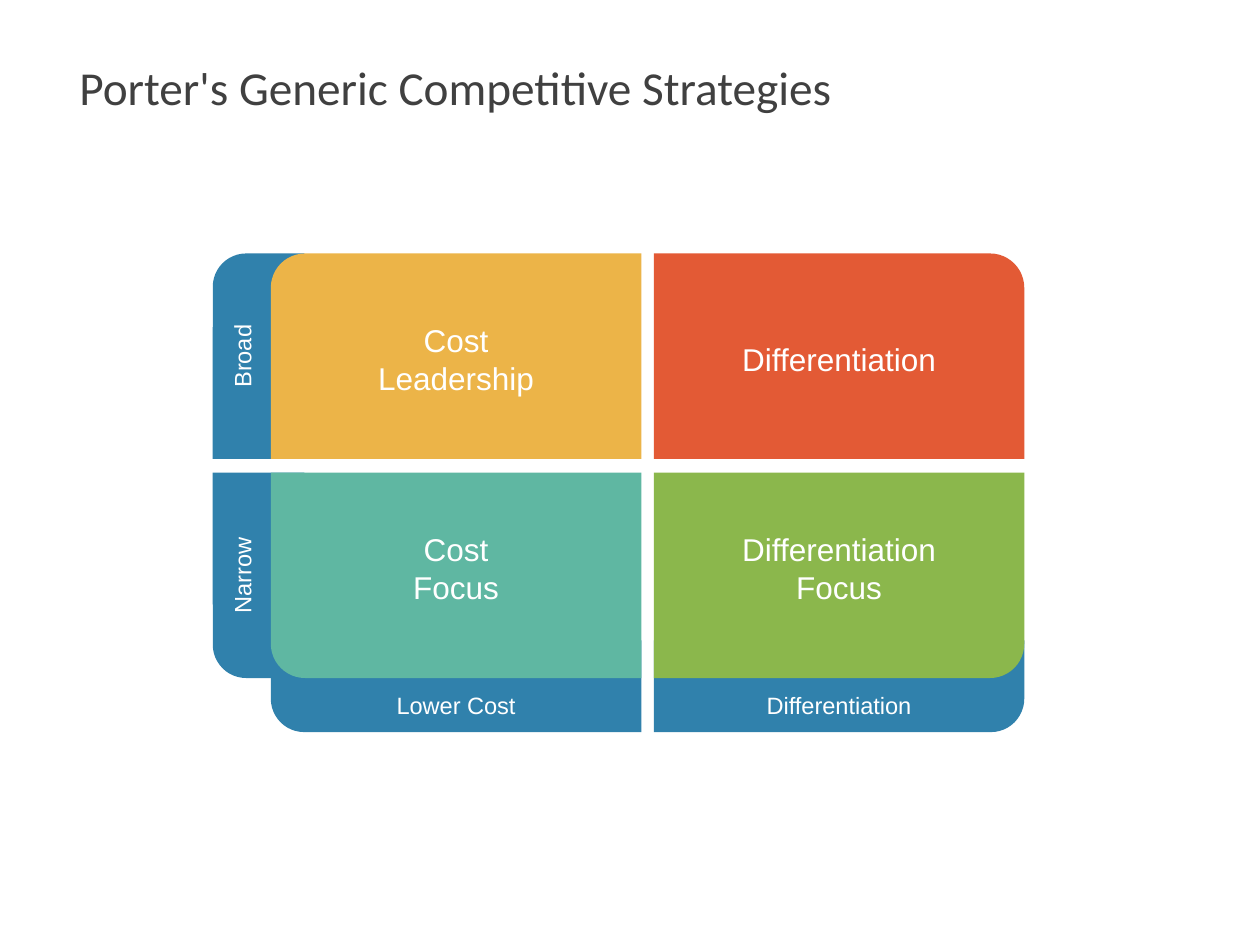
from dataclasses import dataclass

from pptx import Presentation
from pptx.dml.color import RGBColor
from pptx.enum.shapes import MSO_SHAPE
from pptx.enum.text import MSO_ANCHOR, PP_ALIGN
from pptx.util import Cm, Pt


@dataclass(frozen=True)
class Theme:
    title_font: str = "Calibri"
    body_font: str = "Arial"
    title_size: float = 27
    card_size: float = 18
    tab_size: float = 13.5
    title_color: str = "404040"
    label_color: str = "FFFFFF"
    tab_fill: str = "3081AC"


@dataclass(frozen=True)
class Box:
    """A rectangle in centimetres."""
    left: float
    top: float
    width: float
    height: float

    def lengths(self):
        return Cm(self.left), Cm(self.top), Cm(self.width), Cm(self.height)


THEME = Theme()
CARDS = [
    [("Cost\nLeadership", "ECB448"), ("Differentiation", "E35A35")],
    [("Cost\nFocus", "5FB7A2"), ("Differentiation\nFocus", "8BB74C")],
]
SCOPES = ["Broad", "Narrow"]
ADVANTAGES = ["Lower Cost", "Differentiation"]

COLUMN_GAP, ROW_GAP = 0.25, 0.28
SIDE_STRIP, BOTTOM_STRIP = 1.17, 1.09
TAB_DEPTH = 1.85
CARD_ROUNDING, TAB_ROUNDING = 0.167, 0.364
LABEL_SHIFTS = [0.05, -0.15]


def format_para(para, font_name, size, color):
    para.font.name = font_name
    para.font.size = Pt(size)
    para.font.color.rgb = RGBColor.from_string(color)


def add_corner_panel(group, box, color, rounding, on_left, on_bottom):
    """Add a rectangle whose one rounded corner is on the given sides."""
    panel = group.shapes.add_shape(MSO_SHAPE.ROUND_1_RECTANGLE, *box.lengths())
    panel.adjustments[0] = rounding
    panel.shadow.inherit = False
    panel.fill.solid()
    panel.fill.fore_color.rgb = RGBColor.from_string(color)
    panel.line.fill.background()
    transform = panel.element.spPr.get_or_add_xfrm()
    transform.set("flipH", str(int(on_left)))
    transform.set("flipV", str(int(on_bottom)))


def add_label(group, box, text, size, rotation=0):
    """Add centred text in the box; a quarter turn keeps the box's centre."""
    label = group.shapes.add_textbox(*box.lengths())
    label.rotation = rotation
    frame = label.text_frame
    frame.word_wrap = True
    frame.vertical_anchor = MSO_ANCHOR.MIDDLE
    frame.margin_top = frame.margin_bottom = 0
    frame.text = text
    for para in frame.paragraphs:
        para.alignment = PP_ALIGN.CENTER
        format_para(para, THEME.body_font, size, THEME.label_color)


def add_title(page, box, text):
    title = page.shapes.title
    title.left, title.top, title.width, title.height = box.lengths()
    frame = title.text_frame
    frame.text = text
    frame.vertical_anchor = MSO_ANCHOR.MIDDLE
    frame.margin_left = frame.margin_right = Cm(0.33)
    para = frame.paragraphs[0]
    para.alignment = PP_ALIGN.LEFT
    format_para(para, THEME.title_font, THEME.title_size, THEME.title_color)


def add_side_tab(group, card, text, on_bottom):
    """Add a tab that shows to the left of the card and runs under it."""
    left = card.left - SIDE_STRIP
    tab = Box(left, card.top, TAB_DEPTH, card.height)
    add_corner_panel(group, tab, THEME.tab_fill, TAB_ROUNDING, True, on_bottom)
    offset = (card.height - SIDE_STRIP) / 2
    label = Box(left - offset, card.top + offset, card.height, SIDE_STRIP)
    add_label(group, label, text, THEME.tab_size, rotation=-90)


def add_bottom_tab(group, card, text, on_left):
    """Add a tab that shows below the card and runs under it."""
    bottom = card.top + card.height
    top = bottom + BOTTOM_STRIP - TAB_DEPTH
    tab = Box(card.left, top, card.width, TAB_DEPTH)
    add_corner_panel(group, tab, THEME.tab_fill, TAB_ROUNDING, on_left, True)
    label = Box(card.left, bottom, card.width, BOTTOM_STRIP)
    add_label(group, label, text, THEME.tab_size)


def add_card(group, card, text, color, row, column):
    add_corner_panel(group, card, color, CARD_ROUNDING, column == 0, row == 1)
    label = Box(card.left + 1.03, card.top + 0.56 + LABEL_SHIFTS[row],
                card.width - 2.06, card.height - 1.12)
    add_label(group, label, text, THEME.card_size)


def add_matrix(page, box):
    """Add the two-by-two matrix with its axis tabs along the left and bottom."""
    group = page.shapes.add_group_shape()
    width = (box.width - SIDE_STRIP - COLUMN_GAP) / 2
    height = (box.height - BOTTOM_STRIP - ROW_GAP) / 2
    grid = [[Box(box.left + SIDE_STRIP + column * (width + COLUMN_GAP),
                 box.top + row * (height + ROW_GAP), width, height)
             for column in range(2)] for row in range(2)]
    for row, text in enumerate(SCOPES):
        add_side_tab(group, grid[row][0], text, row == 1)
    for column, text in enumerate(ADVANTAGES):
        add_bottom_tab(group, grid[1][column], text, column == 0)
    for row, cards in enumerate(CARDS):
        for column, (text, color) in enumerate(cards):
            add_card(group, grid[row][column], text, color, row, column)


def main():
    deck = Presentation()
    deck.slide_width, deck.slide_height = Cm(25.4), Cm(19.05)
    page = deck.slides.add_slide(deck.slide_layouts[5])
    add_title(page, Box(1.27, 0.76, 22.86, 1.98),
              "Porter's Generic Competitive Strategies")
    add_matrix(page, Box(4.29, 5.11, 16.36, 9.65))
    deck.save("out.pptx")


if __name__ == "__main__":
    main()
